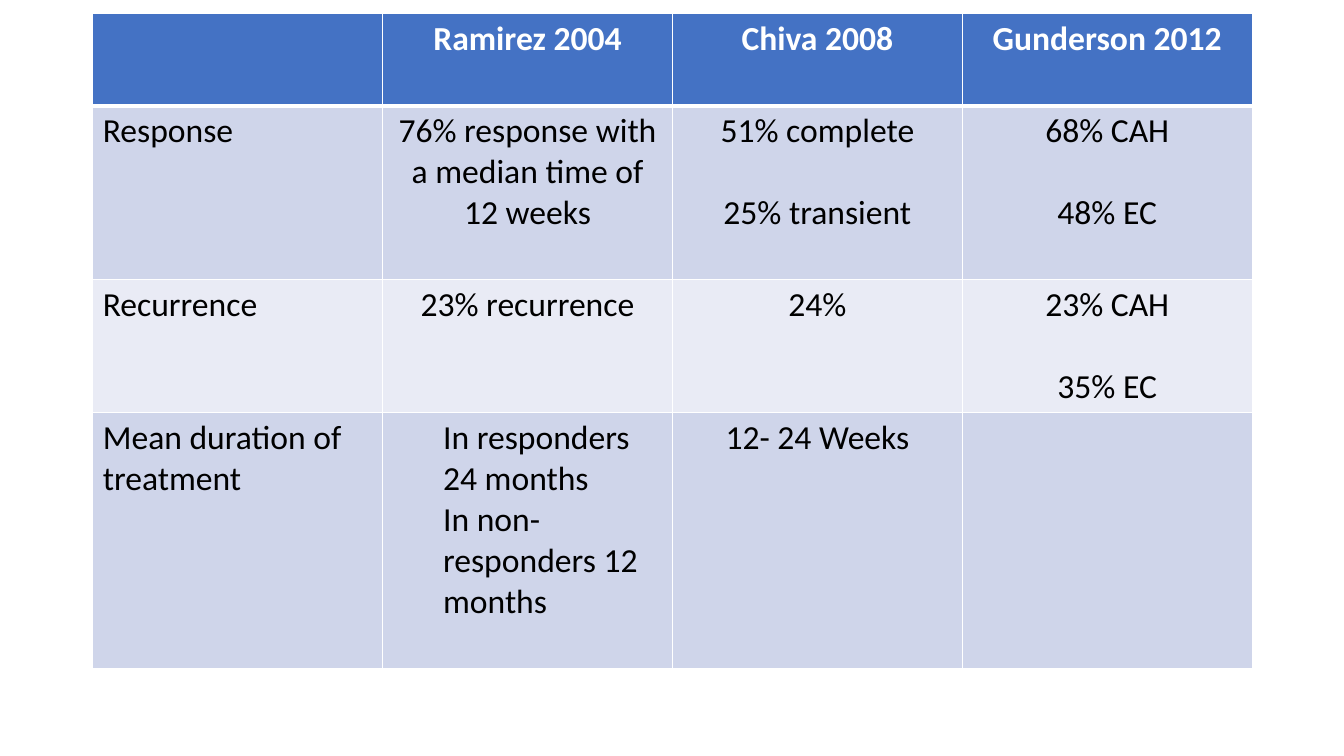
from pptx import Presentation
from pptx.dml.color import RGBColor
from pptx.enum.text import PP_ALIGN
from pptx.oxml.ns import qn
from pptx.util import Inches, Pt
from lxml import etree

LEFT, CENTER = PP_ALIGN.LEFT, PP_ALIGN.CENTER
WHITE, BLACK, BLUE = "FFFFFF", "000000", "4472C4"
BANDS = ["E9EBF5", "CFD5EA"]
HEIGHTS = [0.92, 1.72, 1.32, 2.54]
ROWS = [
    ["", "Ramirez 2004", "Chiva 2008", "Gunderson 2012"],
    ["Response", "76% response with a median time of 12 weeks",
     "51% complete\n25% transient", "68% CAH\n48% EC"],
    ["Recurrence", "23% recurrence", "24%", "23% CAH\n35% EC"],
    ["Mean duration of treatment",
     "In responders 24 months\nIn non-responders 12 months",
     "12- 24 Weeks", ""],
]


def paint(fill, color):
    fill.solid()
    fill.fore_color.rgb = RGBColor.from_string(color)


def edge(cell, side, width):
    """Draw a white border on one side (L, R, T or B) of a cell."""
    props = cell._tc.get_or_add_tcPr()
    line = etree.SubElement(props, qn("a:ln" + side), w=str(Pt(width)))
    solid = etree.SubElement(line, qn("a:solidFill"))
    etree.SubElement(solid, qn("a:srgbClr"), val=WHITE)


prs = Presentation()
prs.slide_width, prs.slide_height = Inches(13.33), Inches(7.5)
slide = prs.slides.add_slide(prs.slide_layouts[6])

table = slide.shapes.add_table(
    len(ROWS), len(ROWS[0]), Inches(0.92), Inches(0.13),
    Inches(11.5), Inches(sum(HEIGHTS))).table

for r, (row, height) in enumerate(zip(ROWS, HEIGHTS)):
    table.rows[r].height = Inches(height)
    for c, text in enumerate(row):
        cell = table.cell(r, c)
        for side in "LRTB":
            thick = (r, side) in [(0, "B"), (1, "T")]
            edge(cell, side, 3 if thick else 1)
        paint(cell.fill, BANDS[r % 2] if r else BLUE)

        cell.text_frame.text = text
        indent = (r, c) == (3, 1)
        for i, para in enumerate(cell.text_frame.paragraphs):
            para.alignment = LEFT if c == 0 or indent else CENTER
            if indent:
                para._p.get_or_add_pPr().set("marL", str(Inches(0.5)))
            elif i:
                para.space_before = Pt(29.3)
            para.font.size = Pt(24)
            for run in para.runs:
                run.font.name = "Calibri"
                run.font.size = Pt(24)
                run.font.bold = r == 0
                paint(run.font.fill, BLACK if r else WHITE)

prs.save("out.pptx")
